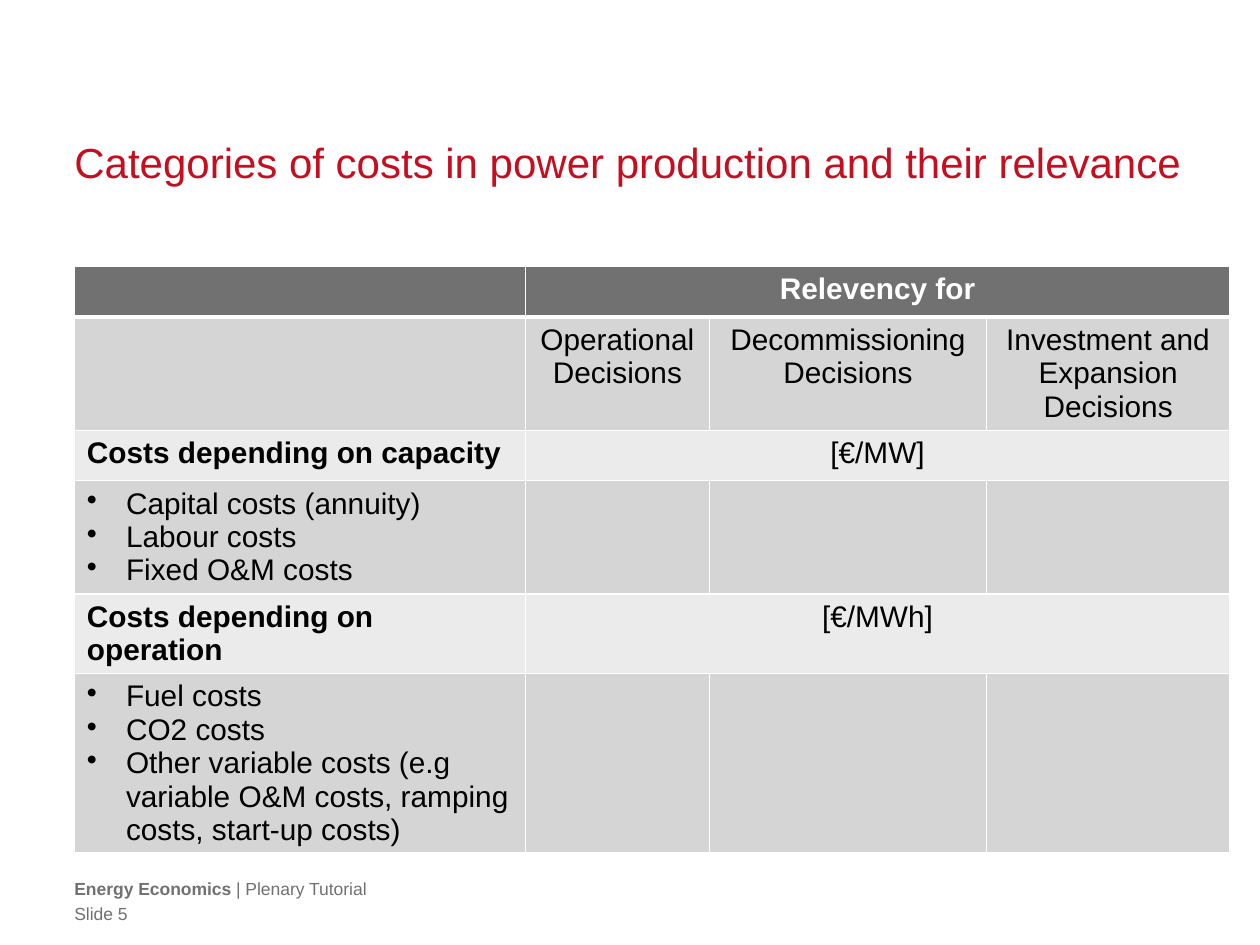
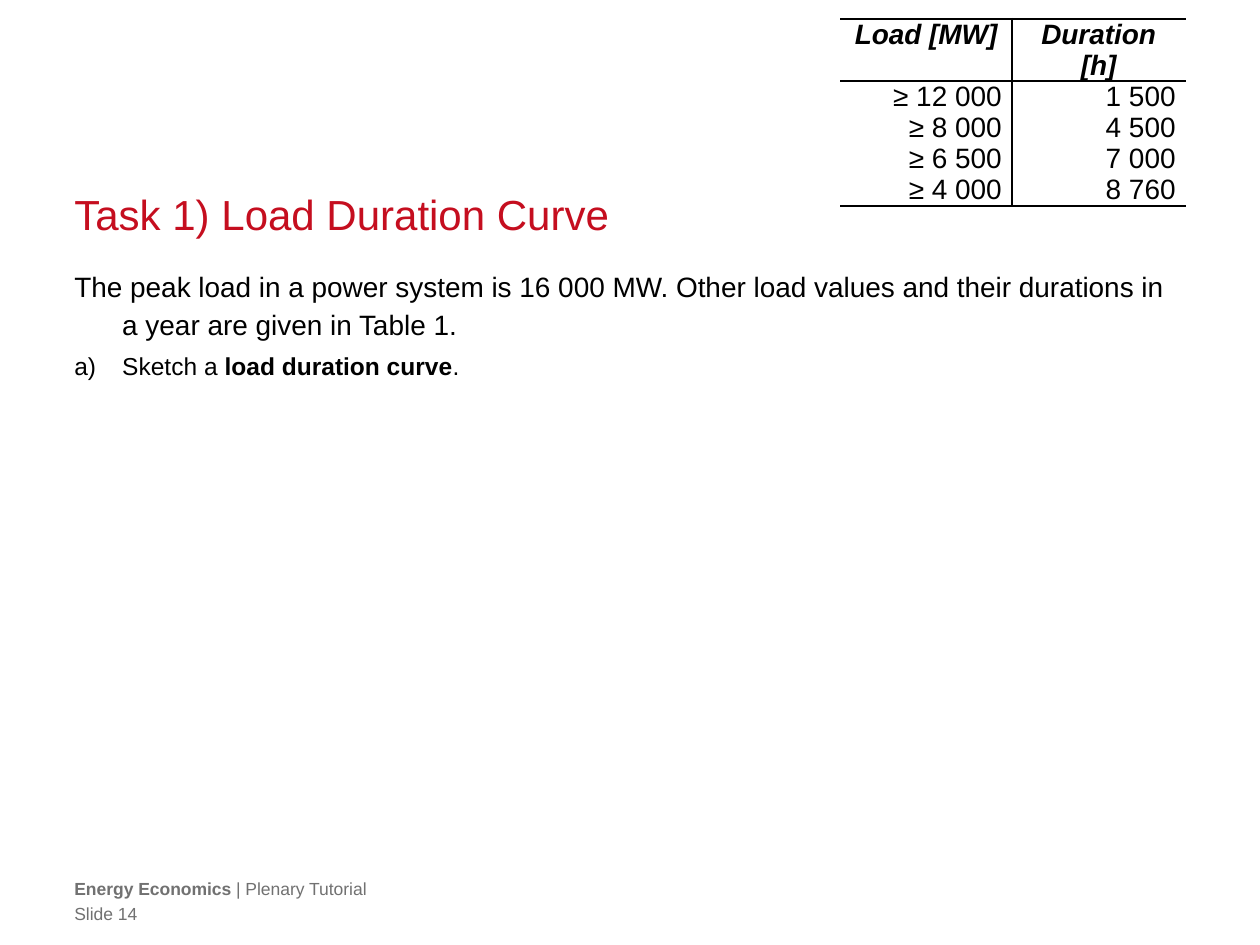
from dataclasses import dataclass
from typing import Optional

from lxml import etree
from pptx import Presentation
from pptx import util as u
from pptx.dml.color import RGBColor
from pptx.enum import text as t
from pptx.oxml import ns

HUES = {"red": "C50E1F", "gray": "717171", "mid": "D5D5D5", "pale": "EBEBEB",
        "white": "FFFFFF", "black": "000000"}
FACE = "Arial"
LEFT, WIDE = 0.59, 8.82
ALIGN = {"l": t.PP_ALIGN.LEFT, "c": t.PP_ALIGN.CENTER, "r": t.PP_ALIGN.RIGHT}
SIDES = "LRTB"


@dataclass
class Run:
    text: str
    bold: bool = False


@dataclass
class Para:
    runs: list[Run]
    size: float
    hue: str = "black"
    align: str = "l"
    lead: Optional[float] = None
    hang: float = 0
    mark: Optional[tuple[str, str, str]] = None
    slant: bool = False


@dataclass
class Line:
    hue: str
    width: float


DOT = ("buChar", "char", "•")
ALPHA = ("buAutoNum", "type", "alphaLcParenR")


def apply(item, props: dict) -> None:
    for name, value in props.items():
        setattr(item, name, value)


def tint(hue: str) -> RGBColor:
    return RGBColor.from_string(HUES[hue])


def write(frame, paras: list[Para]) -> None:
    for i, spec in enumerate(paras):
        para = frame.paragraphs[0] if i == 0 else frame.add_paragraph()
        if spec.hang:
            prop = para._p.get_or_add_pPr()
            prop.set("marL", str(u.Inches(spec.hang)))
            prop.set("indent", str(-u.Inches(spec.hang)))
            if spec.mark:
                tag, key, value = spec.mark
                etree.SubElement(prop, ns.qn(f"a:{tag}")).set(key, value)
        apply(para, {"alignment": ALIGN[spec.align], "space_before": u.Pt(0)})
        if spec.lead:
            para.line_spacing = u.Pt(spec.lead)
        for part in spec.runs:
            run = para.add_run()
            run.text = part.text
            apply(run.font, {"name": FACE, "size": u.Pt(spec.size),
                             "bold": part.bold, "italic": spec.slant})
            run.font.color.rgb = tint(spec.hue)


def setup(frame, anchor=t.MSO_ANCHOR.TOP) -> None:
    apply(frame, {"word_wrap": True, "auto_size": t.MSO_AUTO_SIZE.NONE,
                  "vertical_anchor": anchor, "margin_left": 0,
                  "margin_right": 0, "margin_top": 0, "margin_bottom": 0})


def label(slide, top: float, high: float, paras: list[Para]) -> None:
    box = slide.shapes.add_textbox(*map(u.Inches, (LEFT, top, WIDE, high)))
    setup(box.text_frame)
    write(box.text_frame, paras)


def start(deck, title: str, top: float, page: int):
    slide = deck.slides.add_slide(deck.slide_layouts[5])
    head = slide.shapes.title
    apply(head, {"left": u.Inches(LEFT), "top": u.Inches(top),
                 "width": u.Inches(WIDE), "height": u.Inches(0.39)})
    setup(head.text_frame, t.MSO_ANCHOR.BOTTOM)
    write(head.text_frame, [Para([Run(title)], 24, "red", lead=30)])
    course = [Run("Energy Economics ", True), Run("| Plenary Tutorial")]
    for y, runs in ((6.97, course), (7.17, [Run(f"Slide {page}")])):
        label(slide, y, 0.17, [Para(runs, 10, "gray")])
    return slide


def edge(cell, lines: dict[str, Line]) -> None:
    prop = cell._tc.get_or_add_tcPr()
    for side in SIDES:
        node = etree.SubElement(prop, ns.qn(f"a:ln{side}"))
        line = lines.get(side)
        if line is None:
            etree.SubElement(node, ns.qn("a:noFill"))
            continue
        node.set("w", str(u.Pt(line.width)))
        fill = etree.SubElement(node, ns.qn("a:solidFill"))
        etree.SubElement(fill, ns.qn("a:srgbClr")).set("val", HUES[line.hue])


def grid(slide, left: float, top: float, cols: list[float], rows: list[float]):
    size = map(u.Inches, (left, top, sum(cols), sum(rows)))
    table = slide.shapes.add_table(len(rows), len(cols), *size).table
    apply(table, {"first_row": False, "horz_banding": False})
    for col, wide in zip(table.columns, cols):
        col.width = u.Inches(wide)
    for row, high in zip(table.rows, rows):
        row.height = u.Inches(high)
    return table


def costs(deck) -> None:
    slide = start(deck, "Categories of costs in power production and their relevance", 1.09, 5)
    table = grid(slide, LEFT, 2.11, [3.58, 1.46, 2.2, 1.93],
                 [0.4, 0.9, 0.4, 0.9, 0.63, 1.42])
    fills = ["gray", "mid", "pale", "mid", "pale", "mid"]
    thin, thick = Line("white", 1), Line("white", 3)
    for r, hue in enumerate(fills):
        for c in range(4):
            cell = table.cell(r, c)
            lines = dict.fromkeys(SIDES, thin)
            if r < 2:
                lines["B" if r == 0 else "T"] = thick
            edge(cell, lines)
            cell.fill.solid()
            cell.fill.fore_color.rgb = tint(hue)

    heads = ["Operational Decisions", "Decommissioning Decisions",
             "Investment and Expansion Decisions"]
    for c, name in enumerate(heads, 1):
        write(table.cell(1, c).text_frame, [Para([Run(name)], 17, align="c")])

    spans = [(0, "Relevency for", "white"), (2, "[€/MW]", "black"), (4, "[€/MWh]", "black")]
    for r, name, hue in spans:
        table.cell(r, 1).merge(table.cell(r, 3))
        write(table.cell(r, 1).text_frame,
              [Para([Run(name, r == 0)], 17, hue, "c")])

    groups = [
        ("Costs depending on capacity",
         ["Capital costs (annuity)", "Labour costs", "Fixed O&M costs"]),
        ("Costs depending on operation",
         ["Fuel costs", "CO2 costs",
          "Other variable costs (e.g variable O&M costs, ramping costs, start-up costs)"]),
    ]
    for i, (name, items) in enumerate(groups):
        r = 2 + 2 * i
        write(table.cell(r, 0).text_frame, [Para([Run(name, True)], 17)])
        write(table.cell(r + 1, 0).text_frame,
              [Para([Run(item)], 17, hang=0.31, mark=DOT) for item in items])


def load(deck) -> None:
    slide = start(deck, "Task 1) Load Duration Curve", 1.51, 14)
    intro = ("The peak load in a power system is 16 000 MW. Other load values "
             "and their durations in a year are given in Table 1.")
    task = [Run("Sketch a "), Run("load duration curve", True), Run(".")]
    label(slide, 2.1, 4.45, [Para([Run(intro)], 16, lead=22, hang=0.38),
                             Para(task, 14, lead=22, hang=0.38, mark=ALPHA)])

    data = [("Load [MW]", "Duration [h]"), ("≥ 12 000", "1 500"), ("≥ 8 000", "4 500"),
            ("≥ 6 500", "7 000"), ("≥ 4 000", "8 760")]
    table = grid(slide, 6.67, 0.15, [1.36, 1.38], [0.48] + [0.24] * 4)
    thin, thick = Line("black", 1), Line("black", 1.5)
    for r, row in enumerate(data):
        for c, value in enumerate(row):
            cell = table.cell(r, c)
            lines = {"R" if c == 0 else "L": thin}
            if r < 2:
                lines["T"] = thick if r == 0 else thin
            if r in (0, len(data) - 1):
                lines["B"] = thin if r == 0 else thick
            edge(cell, lines)
            cell.fill.background()
            apply(cell, {"margin_left": u.Inches(0.08), "margin_right": u.Inches(0.08),
                         "margin_top": 0, "margin_bottom": 0})
            write(cell.text_frame, [Para([Run(value, r == 0)], 16,
                                         align="c" if r == 0 else "r", slant=r == 0)])


def main() -> None:
    deck = Presentation()
    apply(deck, {"slide_width": u.Inches(10), "slide_height": u.Inches(7.5)})
    costs(deck)
    load(deck)
    deck.save("out.pptx")


if __name__ == "__main__":
    main()
